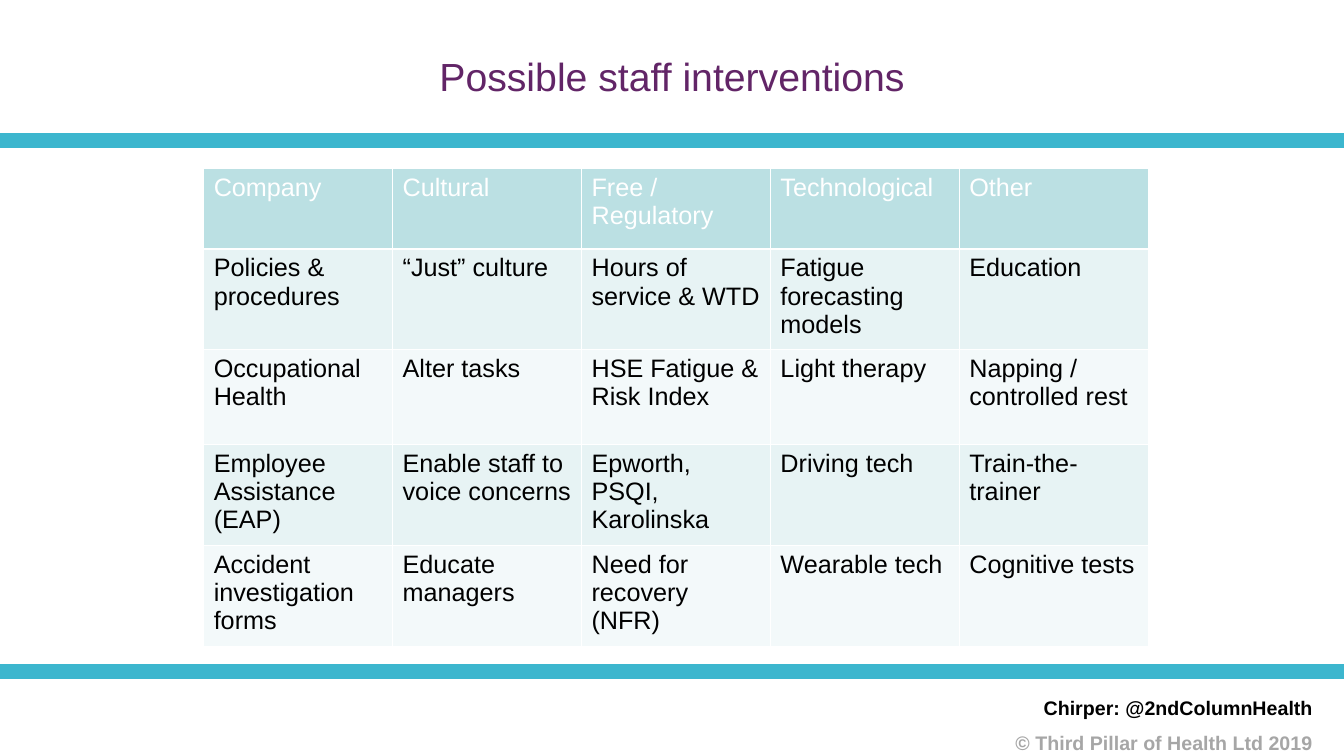
import pptx
import pptx.util
import pptx.dml.color
import pptx.enum.shapes
import pptx.enum.text
import pptx.oxml.ns
import lxml.etree

WIDTH, HEIGHT = 13.33, 7.5
FONT = "Arial"
COLOURS = {
    "rule": "3CB6CE", "title": "622567", "header": "BBE0E3",
    "odd_row": "E7F3F4", "even_row": "F3F9FA",
    "white": "FFFFFF", "black": "000000", "grey": "A6A6A6",
}
INTERVENTIONS = [
    ["Company", "Cultural", "Free / Regulatory", "Technological", "Other"],
    ["Policies & procedures", "“Just” culture", "Hours of service & WTD",
     "Fatigue forecasting models", "Education"],
    ["Occupational Health", "Alter tasks", "HSE Fatigue & Risk Index",
     "Light therapy", "Napping / controlled rest"],
    ["Employee Assistance (EAP)", "Enable staff to voice concerns",
     "Epworth, PSQI, Karolinska", "Driving tech", "Train-the-trainer"],
    ["Accident investigation forms", "Educate managers",
     "Need for recovery (NFR)", "Wearable tech", "Cognitive tests"],
]
ALIGN = pptx.enum.text.PP_ALIGN
inches = pptx.util.Inches


def colour(name):
    return pptx.dml.color.RGBColor.from_string(COLOURS[name])


def write(para, text, size=18, ink="black", bold=False, align=ALIGN.LEFT, spacing=None):
    para.alignment = align
    para.line_spacing = spacing
    span = para.add_run()
    span.text = text
    span.font.name = FONT
    span.font.size = pptx.util.Pt(size)
    span.font.bold = bold
    span.font.color.rgb = colour(ink)


def add_text_frame(page, left, top, width, height):
    frame = page.shapes.add_textbox(*map(inches, (left, top, width, height))).text_frame
    frame.word_wrap = True
    return frame


def add_rule(page, top):
    rule = page.shapes.add_connector(
        pptx.enum.shapes.MSO_CONNECTOR.STRAIGHT,
        0, inches(top), inches(WIDTH), inches(top))
    rule.line.color.rgb = colour("rule")
    rule.line.width = pptx.util.Pt(10.75)
    lxml.etree.SubElement(rule._element.spPr, pptx.oxml.ns.qn("a:effectLst"))


def add_title(page, left, top, width, height):
    frame = add_text_frame(page, left, top, width, height)
    frame.vertical_anchor = pptx.enum.text.MSO_ANCHOR.MIDDLE
    write(frame.paragraphs[0], "Possible staff interventions",
          size=28, ink="title", align=ALIGN.CENTER)


def add_borders(cell):
    """Draw a thin white line on each side; borders must precede the fill."""
    properties = cell._tc.get_or_add_tcPr()
    for position, side in enumerate(("lnL", "lnR", "lnT", "lnB")):
        border = lxml.etree.Element(pptx.oxml.ns.qn("a:" + side), w="12700")
        fill = lxml.etree.SubElement(border, pptx.oxml.ns.qn("a:solidFill"))
        lxml.etree.SubElement(fill, pptx.oxml.ns.qn("a:srgbClr"), val=COLOURS["white"])
        properties.insert(position, border)


def add_interventions(page, left, top, width, height, header_height=0.8):
    row_count, column_count = len(INTERVENTIONS), len(INTERVENTIONS[0])
    table = page.shapes.add_table(
        row_count, column_count, *map(inches, (left, top, width, height))).table
    for number, (row, labels) in enumerate(zip(table.rows, INTERVENTIONS)):
        is_header = number == 0
        row.height = inches(
            header_height if is_header else (height - header_height) / (row_count - 1))
        shade = "header" if is_header else "odd_row" if number % 2 else "even_row"
        for cell, label in zip(row.cells, labels):
            cell.fill.solid()
            cell.fill.fore_color.rgb = colour(shade)
            add_borders(cell)
            write(cell.text_frame.paragraphs[0], label,
                  ink="white" if is_header else "black")


def add_footer(page, left, top, width, height):
    frame = add_text_frame(page, left, top, width, height)
    style = dict(size=14, bold=True, align=ALIGN.RIGHT, spacing=1.5)
    write(frame.paragraphs[0], "Chirper: @2ndColumnHealth", **style)
    write(frame.add_paragraph(), "© Third Pillar of Health Ltd 2019", ink="grey", **style)


def main():
    deck = pptx.Presentation()
    deck.slide_width, deck.slide_height = inches(WIDTH), inches(HEIGHT)
    page = deck.slides.add_slide(deck.slide_layouts[6])
    for top in (1.39, 6.66):
        add_rule(page, top)
    add_title(page, WIDTH * 0.05, 0.13, WIDTH * 0.9, HEIGHT / 6)
    add_interventions(page, 2.02, 1.67, 9.37, 4.56)
    add_footer(page, 8.79, 6.74, 4.33, 0.67)
    deck.save("out.pptx")


if __name__ == "__main__":
    main()
